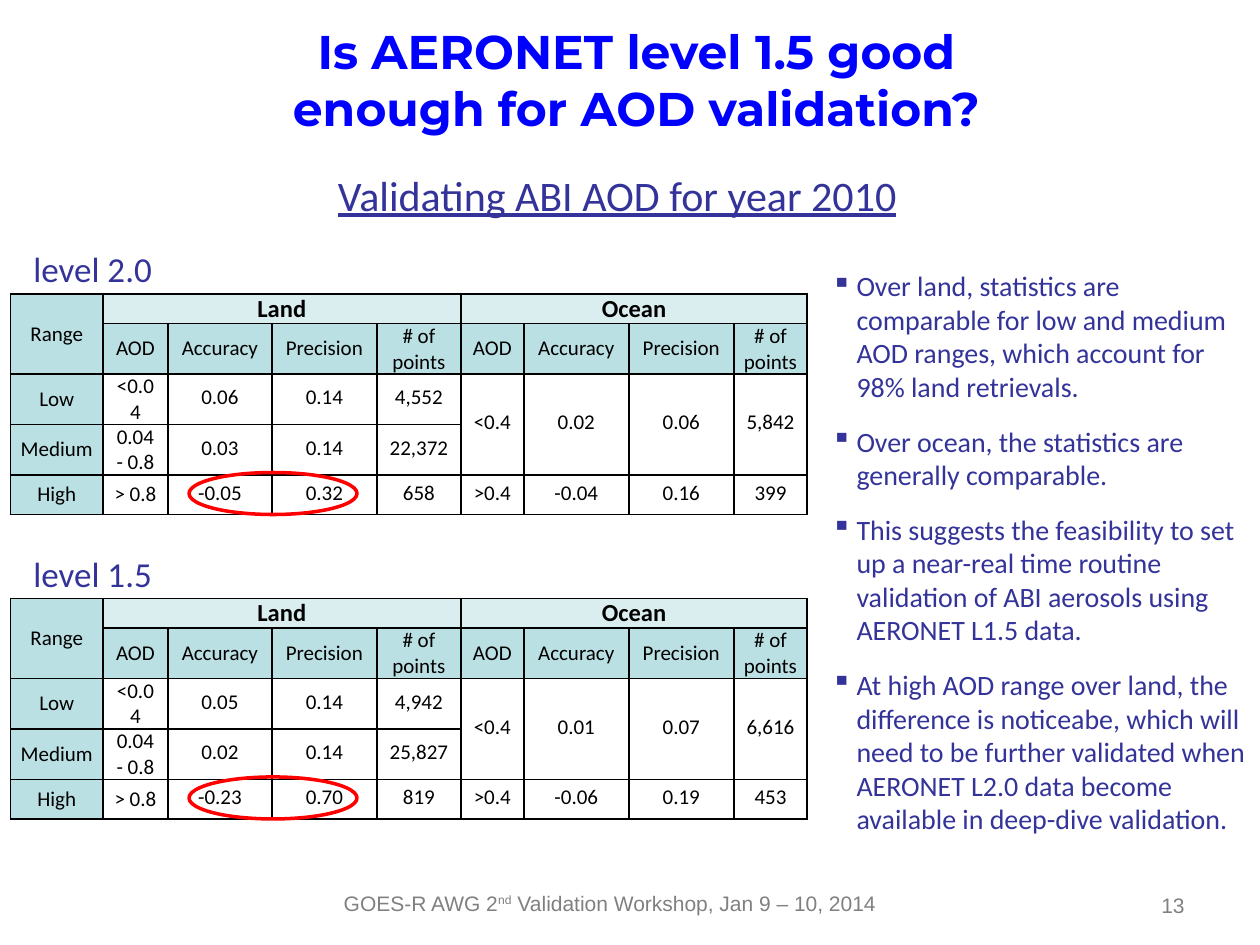
import dataclasses
import itertools

import pptx
import pptx.dml.color
import pptx.enum.shapes
import pptx.enum.text
import pptx.oxml
import pptx.oxml.ns
import pptx.util

UNIT = pptx.util.Inches(1 / 12)
NAVY, BLUE, GRAY, BLACK, RED = "333399", "0000FF", "808080", "000000", "FF0000"
HEADER, GROUP = "BBE0E3", "DAEDEF"
ALIGN = pptx.enum.text.PP_ALIGN
MIDDLE = pptx.enum.text.MSO_ANCHOR.MIDDLE
COLS = (8.8, 6.2, 9.9, 10, 8, 6, 10, 10, 7)
ROWS = (2.3, 4.6, 3.8, 3.8, 3.8)
MEASURES = ("AOD", "Accuracy", "Precision", "# of points")
SPANS = ((0, 0, 1, 0), (0, 1, 0, 4), (0, 5, 0, 8),
         *((2, c, 3, c) for c in range(5, 9)))


@dataclasses.dataclass
class Panel:
    label: str
    row: float
    low: tuple[str, ...]
    medium: tuple[str, ...]
    high: tuple[str, ...]


PANELS = (
    Panel("level 2.0", 23,
          ("0.06", "0.14", "4,552", "<0.4", "0.02", "0.06", "5,842"),
          ("0.03", "0.14", "22,372"),
          ("-0.05", "0.32", "658", ">0.4", "-0.04", "0.16", "399")),
    Panel("level 1.5", 52,
          ("0.05", "0.14", "4,942", "<0.4", "0.01", "0.07", "6,616"),
          ("0.02", "0.14", "25,827"),
          ("-0.23", "0.70", "819", ">0.4", "-0.06", "0.19", "453")),
)
FINDINGS = (
    "Over land, statistics are comparable for low and medium AOD ranges, "
    "which account for 98% land retrievals.",
    "Over ocean, the statistics are generally comparable.",
    "This suggests the feasibility to set up a near-real time routine "
    "validation of ABI aerosols using AERONET L1.5 data.",
    "At high AOD range over land, the difference is noticeabe, which will need "
    "to be further validated when AERONET L2.0 data become available in "
    "deep-dive validation.",
)


def rgb(color: str) -> pptx.dml.color.RGBColor:
    return pptx.dml.color.RGBColor.from_string(color)


def box(*lengths: float) -> list[int]:
    return [round(n * UNIT) for n in lengths]


def add_xml(parent, tag: str, body: str = "", **attrs) -> None:
    attributes = "".join(f' {k}="{v}"' for k, v in attrs.items())
    parent.append(pptx.oxml.parse_xml(
        f'<a:{tag} {pptx.oxml.ns.nsdecls("a")}{attributes}>{body}</a:{tag}>'))


def write(p, text: str, *, size: float, color: str = NAVY, font: str = "Calibri",
          bold: bool = False, underline: bool = False, align=None,
          spacing=None, baseline: int = 0):
    if align is not None:
        p.alignment = align
    if spacing is not None:
        p.line_spacing = spacing
    r = p.add_run()
    r.text = text
    f = r.font
    f.name, f.size, f.bold, f.underline = font, pptx.util.Pt(size), bold, underline
    f.color.rgb = rgb(color)
    if baseline:
        r._r.get_or_add_rPr().set("baseline", str(baseline * 1000))


def add_box(s, *grid: float):
    tf = s.shapes.add_textbox(*box(*grid)).text_frame
    tf.word_wrap = True
    return tf


def add_title(s) -> None:
    title = s.shapes.title
    title.left, title.top, title.width, title.height = box(26, 0, 69.2, 15)
    tf = title.text_frame
    tf.auto_size = pptx.enum.text.MSO_AUTO_SIZE.NONE
    tf.vertical_anchor = MIDDLE
    write(tf.paragraphs[0], "Is AERONET level 1.5 good enough for AOD validation?",
          size=27, color=BLUE, font="Montserrat", bold=True, align=ALIGN.CENTER)


def add_findings(s) -> None:
    tf = add_box(s, 78, 25, 42, 57)
    for i, finding in enumerate(FINDINGS):
        p = tf.add_paragraph() if i else tf.paragraphs[0]
        pPr = p._p.get_or_add_pPr()
        indent = pptx.util.Inches(0.2)
        pPr.set("marL", str(indent))
        pPr.set("indent", str(-indent))
        add_xml(pPr, "buChar", char="▪")
        if i:
            p.space_before = pptx.util.Pt(12)
        write(p, finding, size=16)


def style_cell(cell, fill: str | None) -> None:
    cell.margin_left = cell.margin_right = pptx.util.Inches(0.07)
    cell.margin_top = cell.margin_bottom = 0
    cell.vertical_anchor = MIDDLE
    for side in "LRTB":
        add_xml(cell._tc.get_or_add_tcPr(), f"ln{side}",
                f'<a:solidFill><a:srgbClr val="{BLACK}"/></a:solidFill>',
                w=pptx.util.Pt(1))
    if fill:
        cell.fill.solid()
        cell.fill.fore_color.rgb = rgb(fill)
    else:
        cell.fill.background()


def add_statistics(s, panel: Panel) -> None:
    cells = (
        ("Range", "Land", "", "", "", "Ocean"),
        ("", *MEASURES, *MEASURES),
        ("Low", "<0.04", *panel.low),
        ("Medium", "0.04 - 0.8", *panel.medium),
        ("High", "> 0.8", *panel.high),
    )
    frame = s.shapes.add_table(len(ROWS), len(COLS),
                               *box(1, panel.row + 5, sum(COLS), sum(ROWS)))
    table = frame.table
    table.first_row = table.horz_banding = False
    for column, width in zip(table.columns, COLS):
        column.width = round(width * UNIT)
    for row, height in zip(table.rows, ROWS):
        row.height = round(height * UNIT)
    for r, c in itertools.product(range(len(ROWS)), range(len(COLS))):
        cell = table.cell(r, c)
        group = r == 0 and c > 0
        style_cell(cell, GROUP if group else HEADER if r < 2 or c == 0 else None)
        text = cells[r][c] if c < len(cells[r]) else ""
        if text:
            write(cell.text_frame.paragraphs[0], text, size=14 if group else 12,
                  color=BLACK, bold=group, align=ALIGN.CENTER,
                  spacing=pptx.util.Pt(12.8) if r > 1 and c > 1 else None)
    for top, left, bottom, right in SPANS:
        table.cell(top, left).merge(table.cell(bottom, right))


def add_panel(s, panel: Panel) -> None:
    add_statistics(s, panel)
    tf = add_box(s, 2, panel.row, 14.4, 4.8)
    write(tf.paragraphs[0], panel.label, size=20)
    sp = s.shapes.add_shape(pptx.enum.shapes.MSO_SHAPE.OVAL,
                            *box(18, panel.row + 22, 16, 4))
    sp.shadow.inherit = False
    sp.fill.background()
    sp.line.color.rgb = rgb(RED)
    sp.line.width = pptx.util.Pt(2)


def add_footer(s) -> None:
    p = add_box(s, 31, 84.2, 54.2, 4).paragraphs[0]
    for text, baseline in (("GOES-R AWG 2", 0), ("nd", 30),
                           (" Validation Workshop, Jan 9 – 10, 2014", 0)):
        write(p, text, size=12, color=GRAY, font="Arial", align=ALIGN.CENTER,
              baseline=baseline)
    tf = add_box(s, 86, 84.2, 28, 4)
    tf.vertical_anchor = MIDDLE
    write(tf.paragraphs[0], "13", size=12, color=GRAY, font="Arial", align=ALIGN.RIGHT)


def main() -> None:
    prs = pptx.Presentation()
    prs.slide_width, prs.slide_height = box(120, 90)
    s = prs.slides.add_slide(prs.slide_layouts[5])
    add_title(s)
    tf = add_box(s, 31, 14.8, 57.8, 5.3)
    write(tf.paragraphs[0], "Validating ABI AOD for year 2010", size=24,
          underline=True, spacing=1.15)
    add_findings(s)
    for panel in PANELS:
        add_panel(s, panel)
    add_footer(s)
    prs.save("out.pptx")


if __name__ == "__main__":
    main()
